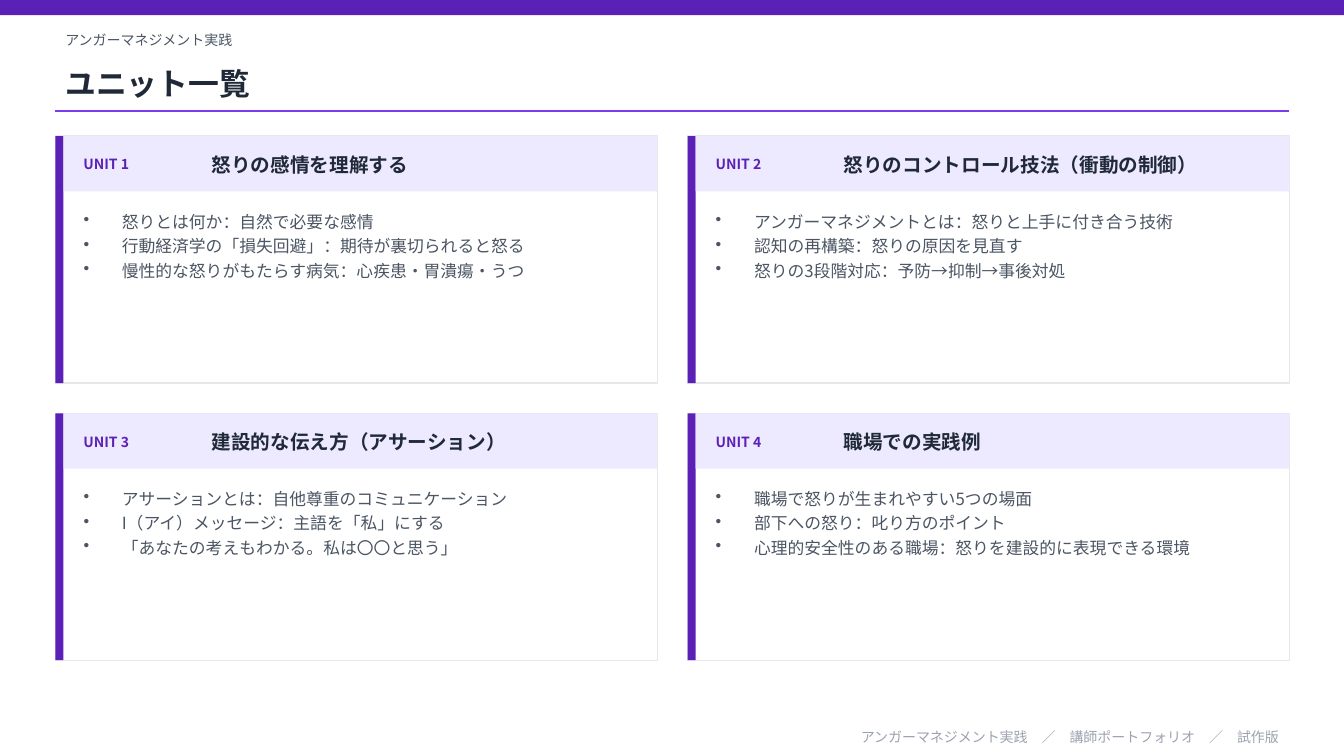
import dataclasses

import pptx
import pptx.dml.color
import pptx.enum.shapes
import pptx.enum.text
import pptx.oxml.ns
import pptx.util
from lxml import etree

EMU_PER_PX = 9144  # 100 px to the inch
ALIGN = pptx.enum.text.PP_ALIGN
ANCHOR = pptx.enum.text.MSO_ANCHOR


@dataclasses.dataclass(frozen=True)
class Theme:
    font: str = "Noto Sans CJK JP"
    accent: str = "5B21B6"
    rule: str = "7C3AED"
    tint: str = "EDE9FE"
    paper: str = "FFFFFF"
    border: str = "E5E7EB"
    ink: str = "1F2937"
    body: str = "4B5563"
    muted: str = "9CA3AF"
    title_size: int = 22
    heading_size: int = 14
    body_size: int = 12
    small_size: int = 10


UNITS = [
    ("怒りの感情を理解する", [
        "怒りとは何か：自然で必要な感情",
        "行動経済学の「損失回避」：期待が裏切られると怒る",
        "慢性的な怒りがもたらす病気：心疾患・胃潰瘍・うつ",
    ]),
    ("怒りのコントロール技法（衝動の制御）", [
        "アンガーマネジメントとは：怒りと上手に付き合う技術",
        "認知の再構築：怒りの原因を見直す",
        "怒りの3段階対応：予防→抑制→事後対処",
    ]),
    ("建設的な伝え方（アサーション）", [
        "アサーションとは：自他尊重のコミュニケーション",
        "I（アイ）メッセージ：主語を「私」にする",
        "「あなたの考えもわかる。私は〇〇と思う」",
    ]),
    ("職場での実践例", [
        "職場で怒りが生まれやすい5つの場面",
        "部下への怒り：叱り方のポイント",
        "心理的安全性のある職場：怒りを建設的に表現できる環境",
    ]),
]


def px(length):
    return pptx.util.Emu(length * EMU_PER_PX)


def rgb(value):
    return pptx.dml.color.RGBColor.from_string(value)


def add_child(parent, tag, **attributes):
    return etree.SubElement(parent, pptx.oxml.ns.qn(tag), attributes)


class SlideBuilder:
    def __init__(self, slide, theme):
        self.slide = slide
        self.theme = theme

    def rectangle(self, left, top, width, height, fill, border=None):
        shape = self.slide.shapes.add_shape(
            pptx.enum.shapes.MSO_SHAPE.RECTANGLE,
            px(left), px(top), px(width), px(height))
        shape.shadow.inherit = False
        shape.fill.solid()
        shape.fill.fore_color.rgb = rgb(fill)
        if border:
            shape.line.color.rgb = rgb(border)
            shape.line.width = pptx.util.Pt(1)
        else:
            shape.line.fill.background()

    def line(self, start_x, start_y, end_x, end_y, color):
        connector = self.slide.shapes.add_connector(
            pptx.enum.shapes.MSO_CONNECTOR.STRAIGHT,
            px(start_x), px(start_y), px(end_x), px(end_y))
        connector.line.color.rgb = rgb(color)
        connector.line.width = pptx.util.Pt(1)
        add_child(connector._element.spPr, "a:effectLst")

    def text(self, left, top, width, height, *lines, size, color, bold=False,
             align=ALIGN.LEFT, anchor=ANCHOR.MIDDLE, bullet=None):
        """Add a text box with one paragraph for each line."""
        box = self.slide.shapes.add_textbox(px(left), px(top), px(width), px(height))
        frame = box.text_frame
        frame.word_wrap = True
        frame.vertical_anchor = anchor
        for index, line in enumerate(lines):
            paragraph = frame.paragraphs[0] if index == 0 else frame.add_paragraph()
            paragraph.alignment = align
            if bullet:
                self.bullet(paragraph, bullet)
            run = paragraph.add_run()
            run.text = line
            run.font.size = pptx.util.Pt(size)
            run.font.bold = bold
            run.font.color.rgb = rgb(color)
            run.font.name = self.theme.font
            add_child(run.font._element, "a:ea", typeface=self.theme.font)

    def bullet(self, paragraph, character):
        """Give the paragraph a hanging bullet."""
        properties = paragraph._p.get_or_add_pPr()
        properties.set("marL", str(px(38)))
        properties.set("indent", str(px(-38)))
        add_child(properties, "a:buChar", char=character)
        paragraph.space_after = pptx.util.Pt(3)

    def unit_card(self, left, top, number, heading, points):
        theme = self.theme
        self.rectangle(left, top, 597, 245, theme.paper, theme.border)
        self.rectangle(left, top, 8, 245, theme.accent)
        self.rectangle(left + 8, top, 589, 55, theme.tint)
        self.text(left + 18, top + 8, 120, 40, f"UNIT {number}",
                  size=theme.small_size, color=theme.accent, bold=True)
        self.text(left + 145, top + 8, 437, 40, heading,
                  size=theme.heading_size, color=theme.ink, bold=True)
        self.text(left + 18, top + 70, 561, 160, *points, size=theme.body_size,
                  color=theme.body, anchor=ANCHOR.TOP, bullet="•")


def main():
    presentation = pptx.Presentation()
    presentation.slide_width = px(1333)
    presentation.slide_height = px(750)
    slide = presentation.slides.add_slide(presentation.slide_layouts[6])
    theme = Theme()
    builder = SlideBuilder(slide, theme)

    builder.rectangle(0, 0, 1333, 15, theme.accent)
    builder.text(55, 25, 1223, 30, "アンガーマネジメント実践",
                 size=theme.small_size, color=theme.body)
    builder.text(55, 55, 1223, 55, "ユニット一覧",
                 size=theme.title_size, color=theme.ink, bold=True)
    builder.line(55, 110, 1278, 110, theme.rule)

    for index, (heading, points) in enumerate(UNITS):
        row, column = divmod(index, 2)
        builder.unit_card(55 + column * 627, 135 + row * 275,
                          index + 1, heading, points)

    builder.text(55, 720, 1223, 22,
                 "アンガーマネジメント実践　／　講師ポートフォリオ　／　試作版",
                 size=theme.small_size, color=theme.muted, align=ALIGN.RIGHT)
    presentation.save("out.pptx")


if __name__ == "__main__":
    main()
